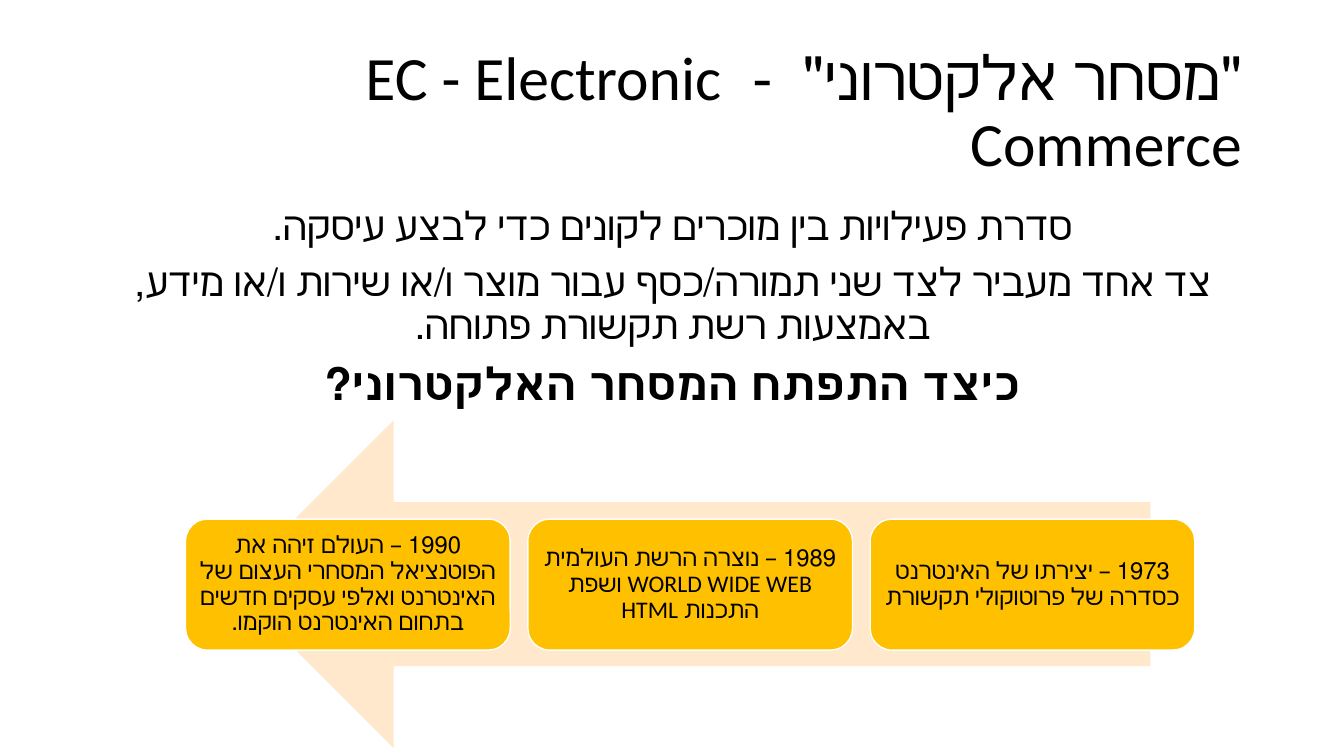
from pptx import Presentation
from pptx.dml.color import RGBColor
from pptx.enum.shapes import MSO_SHAPE
from pptx.enum.text import MSO_ANCHOR, MSO_AUTO_SIZE, PP_ALIGN
from pptx.util import Inches, Pt
from lxml.etree import SubElement
from pptx.oxml.ns import qn

TITLE = '"מסחר אלקטרוני"  -  EC - Electronic Commerce'
BODY = [  # text, size, bold
    ("סדרת פעילויות בין מוכרים לקונים כדי לבצע עיסקה.", 28, False),
    ("צד אחד מעביר לצד שני תמורה/כסף עבור מוצר ו/או שירות ו/או מידע, "
     "באמצעות רשת תקשורת פתוחה.", 28, False),
    ("כיצד התפתח המסחר האלקטרוני?", 32, True),
]
MILESTONES = [  # earliest first, placed from right to left
    "1973 – יצירתו של האינטרנט כסדרה של פרוטוקולי תקשורת",
    "1989 – נוצרה הרשת העולמית WORLD WIDE WEB ושפת התכנות HTML",
    "1990 – העולם זיהה את הפוטנציאל המסחרי העצום של האינטרנט "
    "ואלפי עסקים חדשים בתחום האינטרנט הוקמו.",
]

FONT = "Calibri"
BLACK = RGBColor(0x00, 0x00, 0x00)
WHITE = RGBColor(0xFF, 0xFF, 0xFF)
AMBER = RGBColor(0xFF, 0xC0, 0x00)
PEACH = RGBColor(0xFF, 0xE8, 0xCC)

BOX_TOP, BOX_WIDTH, BOX_HEIGHT = 5.15, 3.22, 1.3
FIRST_LEFT, BOX_STEP = 8.63, 3.395
BOX_MARGIN = 0.07  # the rounded corners inset the text further


def place(shape, left, top, width, height):
    shape.left, shape.top = Inches(left), Inches(top)
    shape.width, shape.height = Inches(width), Inches(height)


def write_hebrew(para, text, size, align, bold=False, before=0):
    """Fill a right-to-left paragraph that has no bullet."""
    para.text = text
    para.alignment = align
    para.line_spacing = 0.9
    para.space_before = Pt(before)
    properties = para._p.get_or_add_pPr()
    for name, value in (("rtl", "1"), ("marL", "0"), ("indent", "0")):
        properties.set(name, value)
    SubElement(properties, qn("a:buNone"))
    font = para.font
    font.name, font.size, font.bold = FONT, Pt(size), bold
    font.color.rgb = BLACK


def add_filled_shape(page, kind, color, *bounds):
    shape = page.shapes.add_shape(kind, *map(Inches, bounds))
    shape.shadow.inherit = False
    shape.fill.solid()
    shape.fill.fore_color.rgb = color
    shape.line.fill.background()
    return shape


def add_milestone(page, text, left):
    box = add_filled_shape(page, MSO_SHAPE.ROUNDED_RECTANGLE, AMBER,
                           left, BOX_TOP, BOX_WIDTH, BOX_HEIGHT)
    box.line.color.rgb = WHITE
    box.line.width = Pt(1)
    frame = box.text_frame
    frame.word_wrap = True
    frame.vertical_anchor = MSO_ANCHOR.MIDDLE
    frame.margin_left = frame.margin_right = Inches(BOX_MARGIN)
    frame.margin_top = frame.margin_bottom = Inches(BOX_MARGIN)
    write_hebrew(frame.paragraphs[0], text, 17, PP_ALIGN.CENTER)


def main():
    deck = Presentation()
    deck.slide_width, deck.slide_height = Inches(13.33), Inches(7.5)
    page = deck.slides.add_slide(deck.slide_layouts[1])

    title, body = page.shapes.title, page.placeholders[1]
    place(title, 0.92, 0.4, 11.5, 1.45)
    place(body, 0.92, 2, 11.5, 4.76)
    for holder in (title, body):
        holder.text_frame.word_wrap = True
        holder.text_frame.auto_size = MSO_AUTO_SIZE.NONE
    title.text_frame.vertical_anchor = MSO_ANCHOR.MIDDLE
    write_hebrew(title.text_frame.paragraphs[0], TITLE, 44, PP_ALIGN.RIGHT)

    frame = body.text_frame
    for index, (text, size, bold) in enumerate(BODY):
        para = frame.add_paragraph() if index else frame.paragraphs[0]
        write_hebrew(para, text, size, PP_ALIGN.CENTER, bold, before=10)

    add_filled_shape(page, MSO_SHAPE.LEFT_ARROW, PEACH, 2.28, 4.17, 9.13, 3.25)
    for index, text in enumerate(MILESTONES):
        add_milestone(page, text, FIRST_LEFT - index * BOX_STEP)

    deck.save("out.pptx")


if __name__ == "__main__":
    main()
